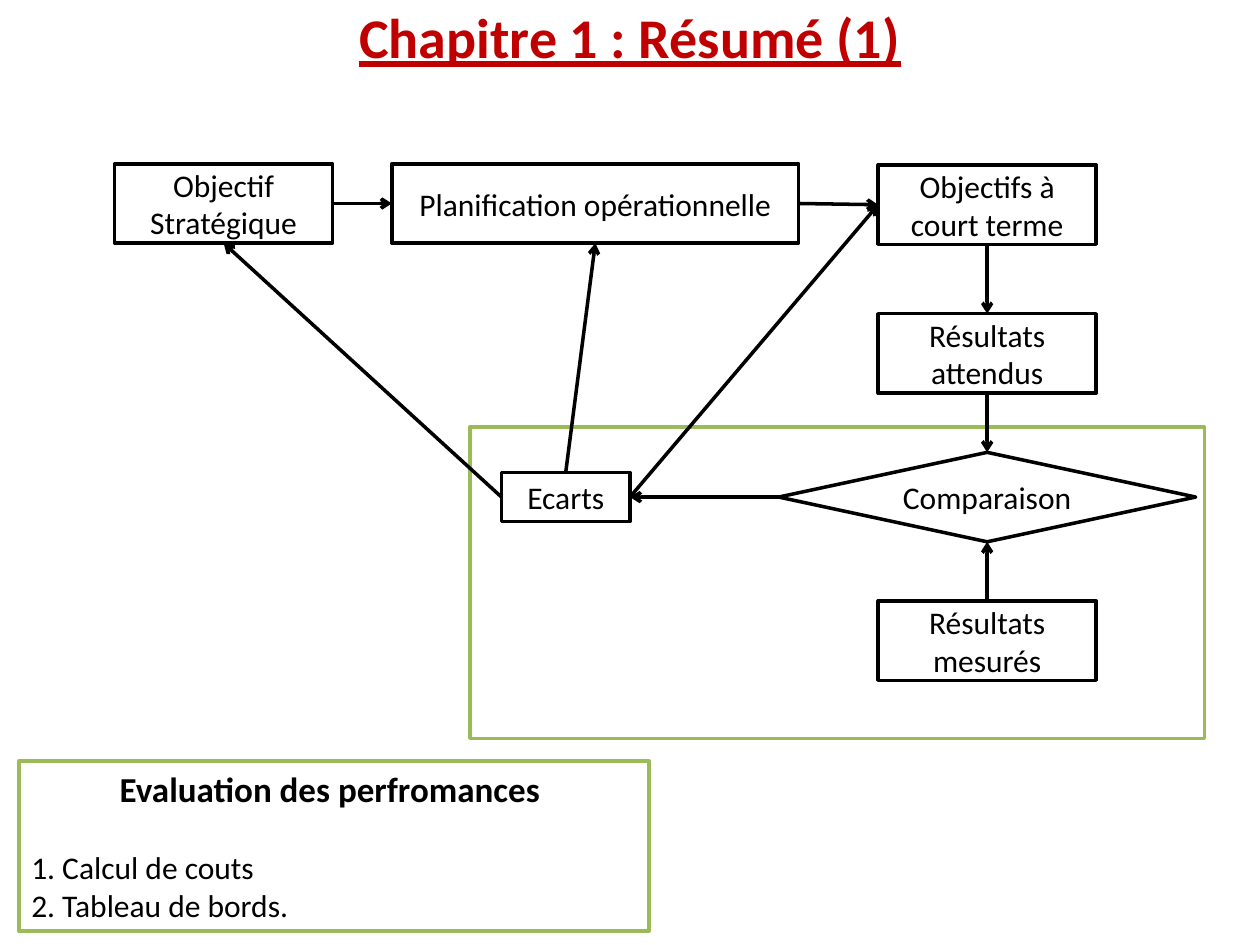
import pptx
import pptx.util
import pptx.dml.color
import pptx.enum.shapes
import pptx.enum.text
import pptx.oxml.ns
from lxml import etree

Inches = pptx.util.Inches
Pt = pptx.util.Pt
qn = pptx.oxml.ns.qn
SHAPE = pptx.enum.shapes.MSO_SHAPE
ANCHOR = pptx.enum.text.MSO_ANCHOR
ALIGN = pptx.enum.text.PP_ALIGN
COLORS = {"title": "C00000", "ink": "000000", "paper": "FFFFFF", "frame": "9BBB59"}
TOP, LEFT, BOTTOM, RIGHT = range(4)  # connection sites


def rgb(name):
    return pptx.dml.color.RGBColor.from_string(COLORS[name])


class Diagram:
    font = "Calibri"
    line_width = Pt(2)

    def __init__(self, slide):
        self.s = slide

    def add_text(self, p, text, align=ALIGN.CENTER, color="ink", **values):
        p.alignment = align
        r = p.add_run()
        r.text = text
        for key, value in {"name": self.font, "size": Pt(18), **values}.items():
            setattr(r.font, key, value)
        r.font.color.rgb = rgb(color)

    def title(self, text, left, top, width, height):
        sp = self.s.shapes.title
        place = {"left": left, "top": top, "width": width, "height": height}
        for key, value in place.items():
            setattr(sp, key, Inches(value))
        tf = sp.text_frame
        tf.vertical_anchor = ANCHOR.TOP
        tf.auto_size = pptx.enum.text.MSO_AUTO_SIZE.NONE
        self.add_text(tf.paragraphs[0], text, color="title",
                      size=Pt(32), bold=True, underline=True)

    def box(self, text, left, top, width, height, kind=SHAPE.RECTANGLE, line="ink"):
        sp = self.s.shapes.add_shape(kind, *map(Inches, (left, top, width, height)))
        sp.shadow.inherit = False
        sp.fill.solid()
        sp.fill.fore_color.rgb = rgb("paper")
        sp.line.color.rgb = rgb(line)
        sp.line.width = self.line_width
        tf = sp.text_frame
        tf.word_wrap = True
        tf.vertical_anchor = ANCHOR.MIDDLE
        if text:
            self.add_text(tf.paragraphs[0], text)
        return sp

    def note(self, heading, lines, left, top, width, height):
        tf = self.box("", left, top, width, height, line="frame").text_frame
        tf.vertical_anchor = ANCHOR.TOP
        self.add_text(tf.paragraphs[0], heading, size=Pt(20), bold=True)
        for i, text in enumerate(lines):
            p = tf.add_paragraph()
            p.space_before = Pt(0 if i else 22)
            self.add_text(p, text, align=ALIGN.LEFT)

    def arrow(self, start, start_site, end, end_site):
        c = self.s.shapes.add_connector(
            pptx.enum.shapes.MSO_CONNECTOR.STRAIGHT, 0, 0, 0, 0)
        c.begin_connect(start, start_site)
        c.end_connect(end, end_site)
        c.line.color.rgb = rgb("ink")
        c.line.width = self.line_width
        props = c.element.spPr
        etree.SubElement(props.find(qn("a:ln")), qn("a:tailEnd"), type="arrow")
        etree.SubElement(props, qn("a:effectLst"))


def main():
    prs = pptx.Presentation()
    prs.slide_width, prs.slide_height = Inches(10), Inches(7.5)
    d = Diagram(prs.slides.add_slide(prs.slide_layouts[5]))

    # Title and frame around the evaluation steps
    d.title("Chapitre 1 : Résumé (1)", 0.5, -0.03, 9, 1.25)
    d.box("", 3.73, 3.39, 5.83, 2.47, line="frame")

    # Planning row
    w, h = 1.73, 0.63
    strategy = d.box("Objectif Stratégique", 0.91, 1.3, w, h)
    planning = d.box("Planification opérationnelle", 3.11, 1.3, 3.23, h)

    # Right-hand column and gaps
    x = 6.97
    targets = d.box("Objectifs à court terme", x, 1.31, w, h)
    expected = d.box("Résultats attendus", x, 2.49, w, h)
    comparison = d.box("Comparaison", 6.18, 3.59, 3.31, 0.71,
                       kind=SHAPE.FLOWCHART_DECISION)
    measured = d.box("Résultats mesurés", x, 4.77, w, h)
    gaps = d.box("Ecarts", 3.98, 3.75, 1.02, 0.39)

    # Arrows: forward flow, then feedback from the gaps
    for link in (
        (strategy, RIGHT, planning, LEFT),
        (planning, RIGHT, targets, LEFT),
        (targets, BOTTOM, expected, TOP),
        (expected, BOTTOM, comparison, TOP),
        (measured, TOP, comparison, BOTTOM),
        (comparison, LEFT, gaps, RIGHT),
        (gaps, LEFT, strategy, BOTTOM),
        (gaps, TOP, planning, BOTTOM),
        (gaps, RIGHT, targets, LEFT),
    ):
        d.arrow(*link)

    # Evaluation note
    d.note("Evaluation des perfromances ",
           ["1. Calcul de couts", "2. Tableau de bords."], 0.15, 6.04, 5, 1.35)

    prs.save("out.pptx")


if __name__ == "__main__":
    main()
